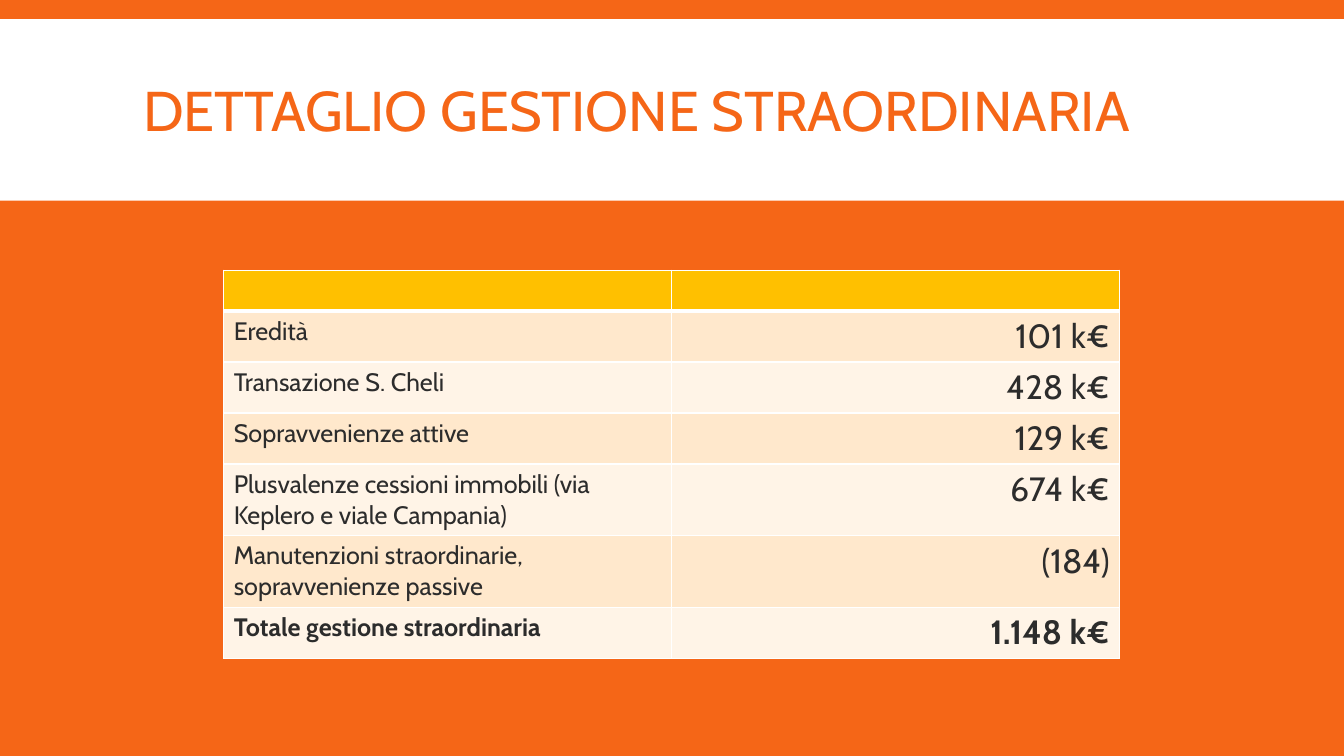
from dataclasses import dataclass

import pptx
import pptx.dml.color
import pptx.enum.shapes
import pptx.enum.text
import pptx.oxml
import pptx.oxml.ns
import pptx.util

Pt = pptx.util.Pt
ALIGN = pptx.enum.text.PP_ALIGN
ANCHOR = pptx.enum.text.MSO_ANCHOR

FONT = "Cabin"
ORANGE, WHITE, AMBER, INK = "F56617", "FFFFFF", "FFC000", "2C2C2C"
BANDS = ("FFE8CC", "FFF4E7")
SLIDE_WIDTH, SLIDE_HEIGHT = 960, 540
ROW_HEIGHT, COLUMN_WIDTH = 29.2, 320


@dataclass(frozen=True)
class Entry:
    label: str
    amount: str
    bold: bool = False


ENTRIES = [
    Entry("Eredità", "101 k€"),
    Entry("Transazione S. Cheli", "428 k€"),
    Entry("Sopravvenienze attive", "129 k€"),
    Entry("Plusvalenze cessioni immobili (via Keplero e viale Campania)", "674 k€"),
    Entry("Manutenzioni straordinarie, sopravvenienze passive", "(184)"),
    Entry("Totale gestione straordinaria", "1.148 k€", bold=True),
]


def paint(fill, color: str) -> None:
    fill.solid()
    fill.fore_color.rgb = pptx.dml.color.RGBColor.from_string(color)


def write(frame, text: str, *, size: float, color: str = INK, bold: bool = False,
          align=ALIGN.LEFT, spacing: float = 1.0) -> None:
    paragraph = frame.paragraphs[0]
    paragraph.alignment = align
    paragraph.line_spacing = spacing
    run = paragraph.add_run()
    run.text = text
    run.font.name = FONT
    run.font.size = Pt(size)
    run.font.bold = bold
    paint(run.font.fill, color)


def style_cell(cell, fill: str, bottom: float = 1, top: float = 1) -> None:
    properties = cell._tc.get_or_add_tcPr()
    for side, width in (("L", 1), ("R", 1), ("T", top), ("B", bottom)):
        properties.append(pptx.oxml.parse_xml(
            f'<a:ln{side} {pptx.oxml.ns.nsdecls("a")} w="{Pt(width)}">'
            f'<a:solidFill><a:srgbClr val="{WHITE}"/></a:solidFill></a:ln{side}>'))
    paint(cell.fill, fill)


def add_title(slide) -> None:
    # White band behind the title
    band = slide.shapes.add_shape(pptx.enum.shapes.MSO_SHAPE.RECTANGLE,
                                  Pt(0), Pt(13.7), Pt(SLIDE_WIDTH), Pt(129.6))
    band.shadow.inherit = False
    paint(band.fill, WHITE)
    band.line.fill.background()
    title = slide.shapes.title
    title._element.addprevious(band._element)

    # Title
    title.left, title.top, title.width, title.height = Pt(95), Pt(22.3), Pt(770.4), Pt(118.8)
    title.text_frame.word_wrap = True
    title.text_frame.auto_size = pptx.enum.text.MSO_AUTO_SIZE.NONE
    title.text_frame.vertical_anchor = ANCHOR.MIDDLE
    write(title.text_frame, "DETTAGLIO GESTIONE STRAORDINARIA",
          size=40, color=ORANGE, spacing=0.85)


def add_entries(slide, entries: list[Entry]) -> None:
    row_count = len(entries) + 1
    table = slide.shapes.add_table(row_count, 2, Pt(159.8), Pt(193), Pt(2 * COLUMN_WIDTH),
                                   Pt(row_count * ROW_HEIGHT)).table
    for row in table.rows:
        row.height = Pt(ROW_HEIGHT)

    # Empty header row
    for cell in table.rows[0].cells:
        style_cell(cell, AMBER, bottom=3)

    # Entries in alternating bands
    for index, entry in enumerate(entries):
        label, amount = table.rows[index + 1].cells
        for cell in (label, amount):
            style_cell(cell, BANDS[index % 2], top=3 if index == 0 else 1)
        write(label.text_frame, entry.label, size=18, bold=entry.bold)
        write(amount.text_frame, entry.amount, size=24, bold=entry.bold, align=ALIGN.RIGHT)


def main() -> None:
    deck = pptx.Presentation()
    deck.slide_width, deck.slide_height = Pt(SLIDE_WIDTH), Pt(SLIDE_HEIGHT)
    slide = deck.slides.add_slide(deck.slide_layouts.get_by_name("Title Only"))
    paint(slide.background.fill, ORANGE)
    add_title(slide)
    add_entries(slide, ENTRIES)
    deck.save("out.pptx")


if __name__ == "__main__":
    main()
